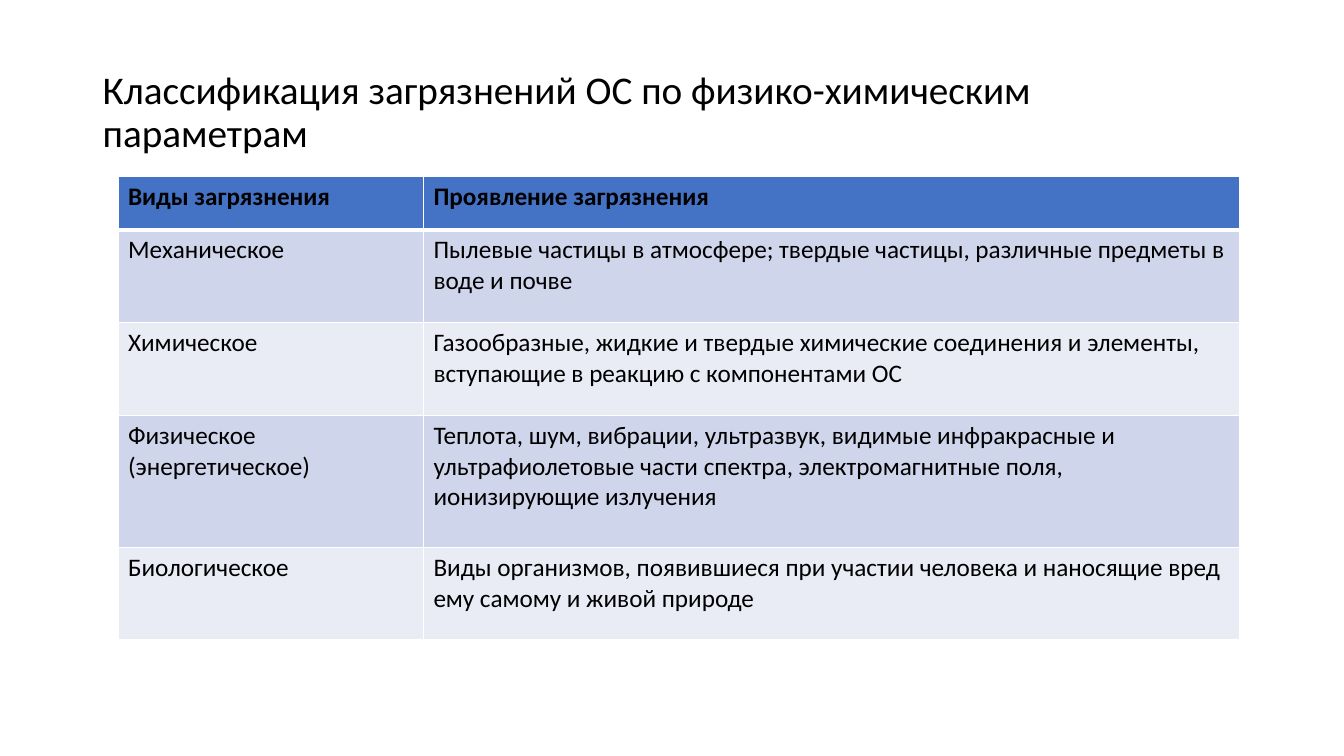
import pptx
import pptx.dml.color
import pptx.enum.text
import pptx.oxml
import pptx.oxml.ns
import pptx.util
from pptx.util import Inches

TITLE = "Классификация загрязнений ОС по физико-химическим параметрам"
POLLUTION = [
    ("Виды загрязнения", "Проявление загрязнения"),
    ("Механическое",
     "Пылевые частицы в атмосфере; твердые частицы, различные предметы в воде и почве"),
    ("Химическое",
     "Газообразные, жидкие и твердые химические соединения и элементы, "
     "вступающие в реакцию с компонентами ОС"),
    ("Физическое (энергетическое)",
     "Теплота, шум, вибрации, ультразвук, видимые инфракрасные и ультрафиолетовые "
     "части спектра, электромагнитные поля, ионизирующие излучения"),
    ("Биологическое",
     "Виды организмов, появившиеся при участии человека и наносящие вред "
     "ему самому и живой природе"),
]
COLUMN_WIDTHS = [3.03, 8.09]
ROW_HEIGHTS = [0.53, 0.92, 0.92, 1.31, 0.92]


def rgb(value):
    return pptx.dml.color.RGBColor.from_string(value)


class SlideBuilder:
    font = "Calibri"
    ink = "000000"
    header = "4472C4"
    bands = ["E9EBF5", "CFD5EA"]
    rule = "FFFFFF"

    def __init__(self, slide):
        self.slide = slide

    def set_text(self, frame, text, size, bold=False, **paragraph_format):
        paragraph = frame.paragraphs[0]
        for name, value in paragraph_format.items():
            setattr(paragraph, name, value)
        run = paragraph.add_run()
        run.text = text
        font_format = {"name": self.font, "size": pptx.util.Pt(size), "bold": bold}
        for name, value in font_format.items():
            setattr(run.font, name, value)
        run.font.color.rgb = rgb(self.ink)

    def title(self, text, left, top, width, height):
        frame = self.slide.shapes.add_textbox(
            Inches(left), Inches(top), Inches(width), Inches(height)).text_frame
        frame.word_wrap = True
        frame.vertical_anchor = pptx.enum.text.MSO_ANCHOR.MIDDLE
        self.set_text(frame, text, 28, line_spacing=0.9)

    def border(self, cell, side, points):
        """Add one edge; edges go in the order L, R, T, B and before the fill."""
        cell._tc.get_or_add_tcPr().append(pptx.oxml.parse_xml(
            f'<a:ln{side} {pptx.oxml.ns.nsdecls("a")} w="{pptx.util.Pt(points)}">'
            f'<a:solidFill><a:srgbClr val="{self.rule}"/></a:solidFill></a:ln{side}>'))

    def table(self, rows, left, top, widths, heights):
        table = self.slide.shapes.add_table(
            len(rows), len(widths), Inches(left), Inches(top),
            Inches(sum(widths)), Inches(sum(heights))).table
        for column, width in zip(table.columns, widths):
            column.width = Inches(width)
        for index, (row, height, texts) in enumerate(zip(table.rows, heights, rows)):
            row.height = Inches(height)
            is_header = index == 0
            edges = {"L": 1, "R": 1, "T": 3 if index == 1 else 1, "B": 3 if is_header else 1}
            for cell, text in zip(row.cells, texts):
                for side, points in edges.items():
                    self.border(cell, side, points)
                cell.fill.solid()
                cell.fill.fore_color.rgb = rgb(self.header if is_header else self.bands[index % 2])
                self.set_text(cell.text_frame, text, 18, bold=is_header)


def main():
    deck = pptx.Presentation()
    deck.slide_width, deck.slide_height = Inches(13.33), Inches(7.5)
    builder = SlideBuilder(deck.slides.add_slide(deck.slide_layouts[6]))
    builder.title(TITLE, 0.92, 0.4, 11.5, 1.45)
    builder.table(POLLUTION, 1.17, 1.75, COLUMN_WIDTHS, ROW_HEIGHTS)
    deck.save("out.pptx")


if __name__ == "__main__":
    main()
